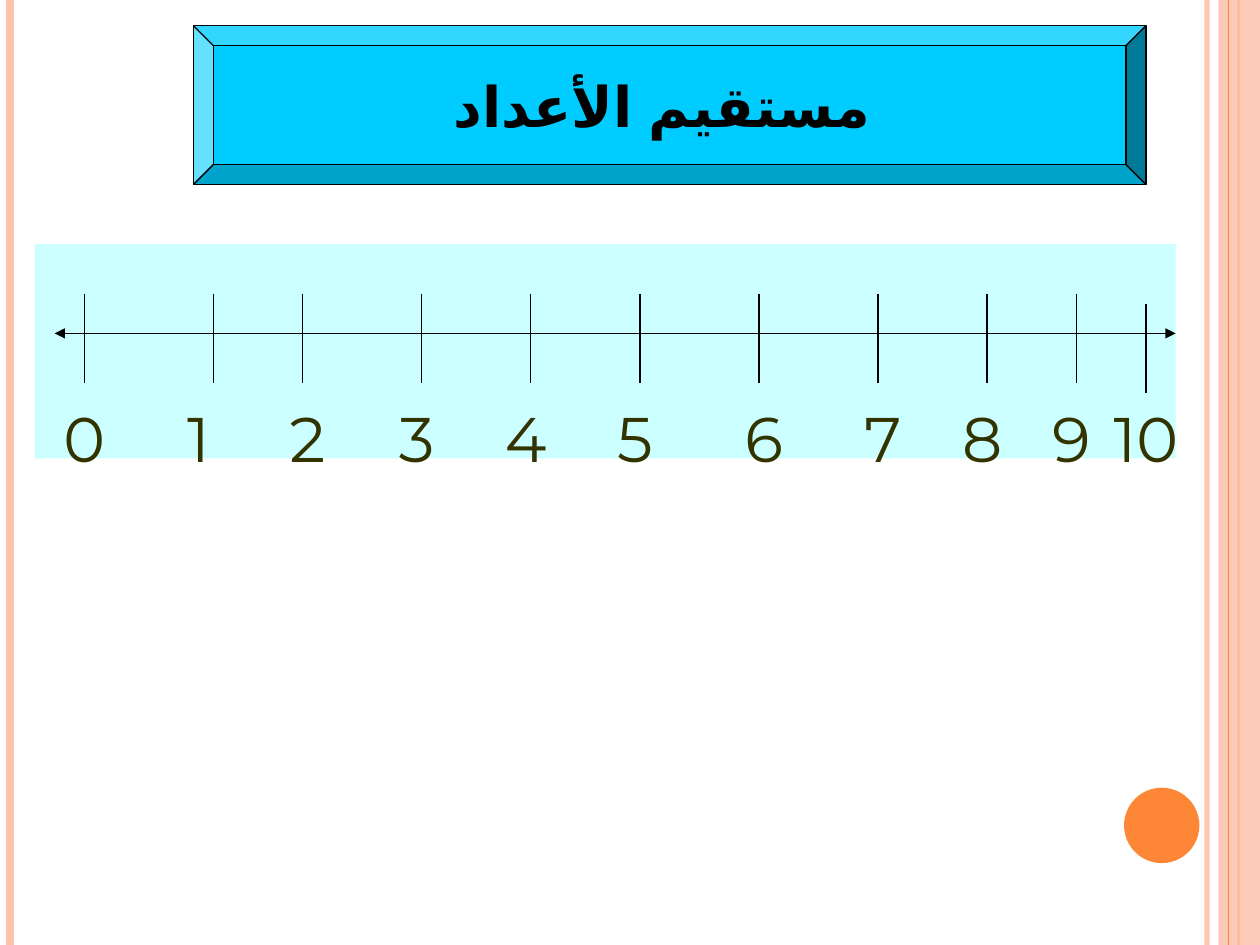
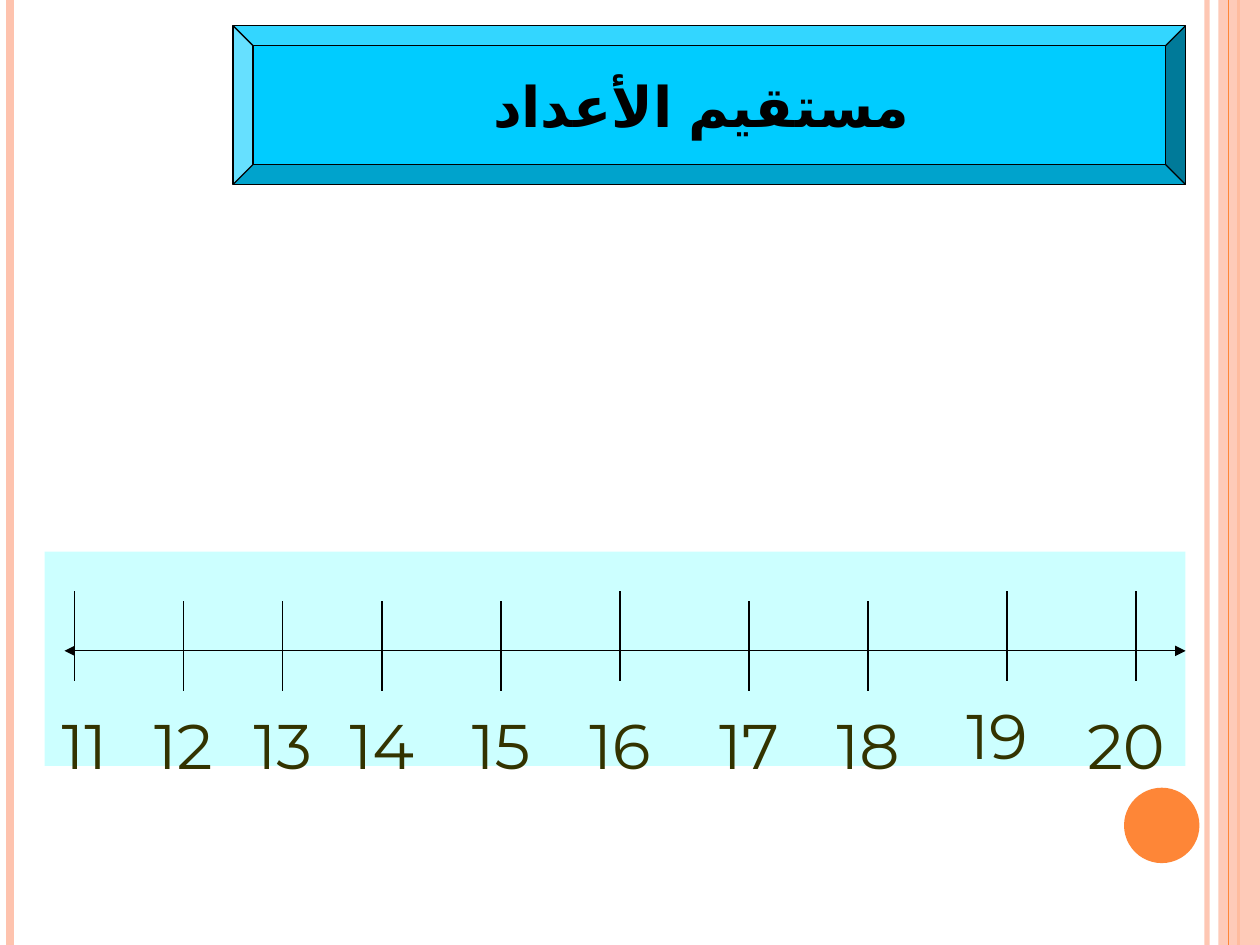
"""Builds two slides that show number lines from 0 to 10 and from 11 to 20."""
from lxml import etree
from pptx import Presentation
from pptx import util as u
from pptx.dml.color import RGBColor
from pptx.enum import lang, shapes, text
from pptx.oxml.ns import qn

COLORS = {"peach": "FEC3AE", "orange": "FE8637", "panel": "CCFFFF",
          "title": "00CCFF", "digit": "333300", "black": "000000"}
TITLE = " مستقيم الأعداد"
WIDTH, HEIGHT = 25.4, 19.05
TICK_HEIGHT = 1.8
LABEL_HEIGHT = 1.2
DIGIT_WIDTH = 0.6

NUMBER_LINES = [
    {"title_x": 3.9, "x": 0.7, "y": 4.92, "axis": (1.1, 23.7), "axis_dy": 1.8,
     "first": 0,
     "ticks": [1.7, 4.3, 6.1, 8.5, 10.7, 12.9, 15.3, 17.7, 19.9, 21.7, 23.1],
     "tick_dy": [1] * 10 + [1.2],
     "labels": [1.7, 4, 6.2, 8.4, 10.6, 12.8, 15.4, 17.8, 19.8, 21.6, 23.1],
     "label_dy": [3] * 11},
    {"title_x": 4.7, "x": 0.9, "y": 11.12, "axis": (1.3, 23.9), "axis_dy": 2,
     "first": 11,
     "ticks": [1.5, 3.7, 5.7, 7.7, 10.1, 12.5, 15.1, 17.5, 20.3, 22.9],
     "tick_dy": [0.8] + [1] * 4 + [0.8] + [1] * 2 + [0.8] * 2,
     "labels": [1.7, 3.7, 5.7, 7.7, 10.1, 12.5, 15.1, 17.5, 20.1, 22.7],
     "label_dy": [3] * 8 + [2.8, 3]},
]


def rgb(name):
    """Return the named colour."""
    return RGBColor.from_string(COLORS[name])


def set_alpha(fill_parent, percent):
    """Make the solid fill under an element partly transparent."""
    color = fill_parent.find(qn("a:solidFill"))[0]
    etree.SubElement(color, qn("a:alpha"), val=str(percent * 1000))


def add_box(slide, kind, x, y, w, h, fill=None):
    """Add a preset shape without an outline, filled if a colour is given."""
    sp = slide.shapes.add_shape(kind, u.Cm(x), u.Cm(y), u.Cm(w), u.Cm(h))
    sp.shadow.inherit = False
    sp.line.fill.background()
    if fill:
        sp.fill.solid()
        sp.fill.fore_color.rgb = rgb(fill)
    else:
        sp.fill.background()
    return sp


def add_line(slide, x1, y1, x2, y2, color="black", width=0.75):
    """Add a straight line without a shadow."""
    line = slide.shapes.add_connector(
        shapes.MSO_CONNECTOR.STRAIGHT, u.Cm(x1), u.Cm(y1), u.Cm(x2), u.Cm(y2))
    line.line.color.rgb = rgb(color)
    line.line.width = u.Pt(width)
    etree.SubElement(line._element.spPr, qn("a:effectLst"))
    return line


def add_axis(slide, x1, x2, y):
    """Add a line with an arrowhead at both ends."""
    ln = add_line(slide, x2, y, x1, y).line._get_or_add_ln()
    for end in ("a:headEnd", "a:tailEnd"):
        etree.SubElement(ln, qn(end), type="triangle")


def write(tf, words, font, size, color):
    """Write one centred, unwrapped paragraph and return it."""
    tf.word_wrap = False
    p = tf.paragraphs[0]
    p.alignment = text.PP_ALIGN.CENTER
    p.font.name, p.font.size = font, u.Pt(size)
    p.font.color.rgb = rgb(color)
    p.add_run().text = words
    return p


def add_number(slide, number, center, y):
    """Add an outlined number centred below its tick."""
    w = DIGIT_WIDTH * len(str(number))
    sp = add_box(slide, shapes.MSO_SHAPE.RECTANGLE, center - w / 2, y, w, LABEL_HEIGHT)
    tf = sp.text_frame
    tf.vertical_anchor = text.MSO_ANCHOR.TOP
    tf.margin_left = tf.margin_right = 0
    p = write(tf, str(number), "Montserrat", 36, "digit")
    ln = etree.Element(qn("a:ln"), w=str(u.Pt(0.75)))
    fill = etree.SubElement(ln, qn("a:solidFill"))
    etree.SubElement(fill, qn("a:srgbClr"), val=COLORS["black"])
    p._p.pPr.find(qn("a:defRPr")).insert(0, ln)


def add_title(slide, x):
    """Add the bevelled title with right-to-left text."""
    sp = add_box(slide, shapes.MSO_SHAPE.BEVEL, x, 0.52, 19.2, 3.2, "title")
    sp.line.color.rgb = rgb("black")
    sp.line.width = u.Pt(0.75)
    sp.text_frame.vertical_anchor = text.MSO_ANCHOR.MIDDLE
    p = write(sp.text_frame, TITLE, "Arial", 32, "black")
    p.font.bold = True
    p.runs[0].font.language_id = lang.MSO_LANGUAGE_ID.ARABIC
    p._p.pPr.set("rtl", "1")
    etree.SubElement(p._p.pPr.find(qn("a:defRPr")), qn("a:cs"), typeface="Arial")


def add_frame(slide):
    """Add the side bands and the disc that every slide shares."""
    edge = add_line(slide, 24.33, 0, 24.33, HEIGHT, "peach", 3)
    set_alpha(edge.line._get_or_add_ln(), 93)
    add_line(slide, 0.2, 0, 0.2, HEIGHT, "peach", 4.5)
    add_line(slide, 24.97, 0, 24.97, HEIGHT, "orange", 1.5)
    band = add_box(slide, shapes.MSO_SHAPE.RECTANGLE,
                   24.56, 0, WIDTH - 24.56, HEIGHT, "peach")
    set_alpha(band._element.spPr, 87)
    add_line(slide, 24.77, 0, 24.77, HEIGHT, "orange")
    add_box(slide, shapes.MSO_SHAPE.OVAL, 22.66, 15.88, 1.52, 1.52, "orange")


def add_number_line(slide, row):
    """Add the panel, axis, ticks and numbers of one number line."""
    y = row["y"]
    add_box(slide, shapes.MSO_SHAPE.RECTANGLE, row["x"], y, 23, 4.32, "panel")
    add_axis(slide, *row["axis"], y + row["axis_dy"])
    for x, dy in zip(row["ticks"], row["tick_dy"]):
        add_line(slide, x, y + dy, x, y + dy + TICK_HEIGHT)
    labels = zip(row["labels"], row["label_dy"])
    for number, (x, dy) in enumerate(labels, row["first"]):
        add_number(slide, number, x, y + dy)


def main():
    """Build and save the slides."""
    prs = Presentation()
    prs.slide_width, prs.slide_height = u.Cm(WIDTH), u.Cm(HEIGHT)
    for row in NUMBER_LINES:
        slide = prs.slides.add_slide(prs.slide_layouts[6])
        add_frame(slide)
        add_number_line(slide, row)
        add_title(slide, row["title_x"])
    prs.save("out.pptx")


if __name__ == "__main__":
    main()
